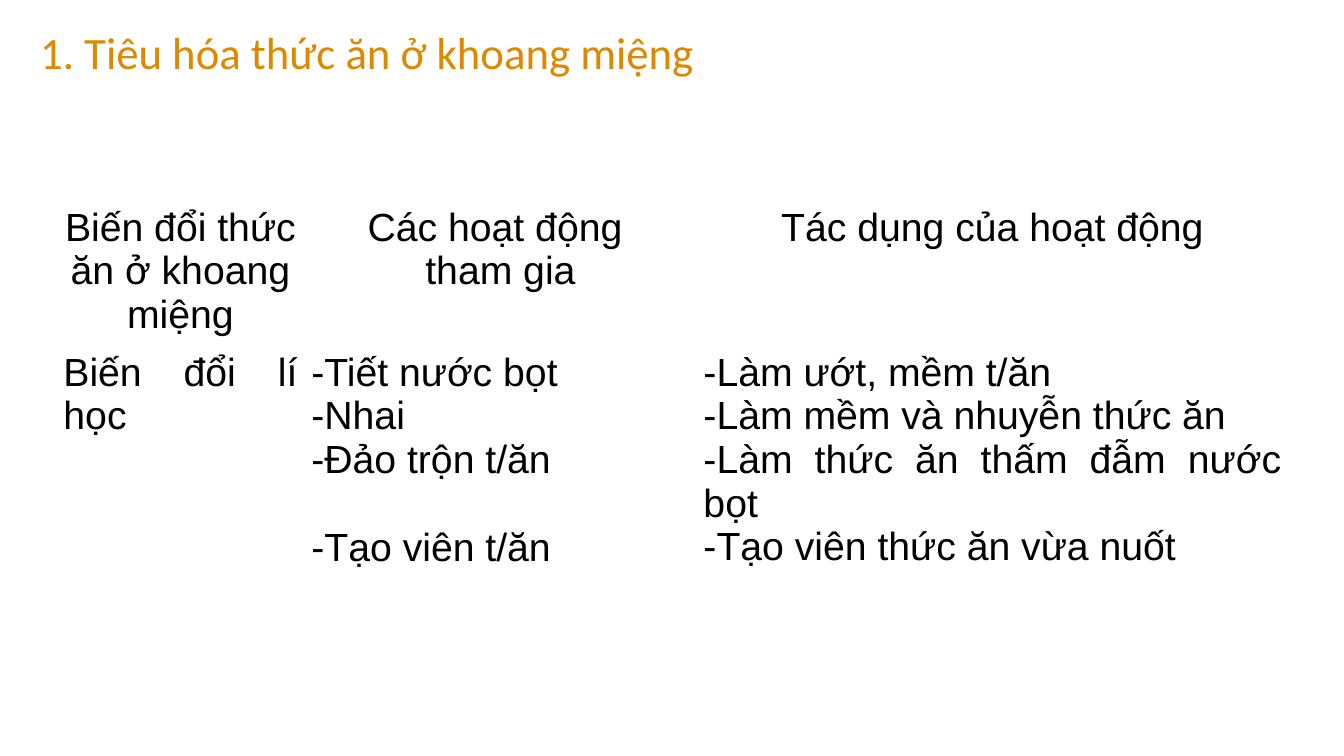
from dataclasses import dataclass

import pptx
import pptx.dml.color
import pptx.enum.text
import pptx.util

Pt = pptx.util.Pt
Align = pptx.enum.text.PP_ALIGN

ORANGE = pptx.dml.color.RGBColor(0xDE, 0x88, 0x00)
BLACK = pptx.dml.color.RGBColor(0x00, 0x00, 0x00)

COLUMN_WIDTHS = (177.12, 280.08, 422.64)
ROW_HEIGHTS = (102.24, 225.36)
CELL_MARGIN = 5.04
LINE_HEIGHT = 31.3


@dataclass(frozen=True)
class Line:
    text: str
    space_before: float = 0


@dataclass(frozen=True)
class TableRow:
    align: Align
    cells: tuple[tuple[Line, ...], ...]


ROWS = (
    TableRow(Align.CENTER, (
        (Line("Biến đổi thức ăn ở khoang miệng"),),
        (Line("Các hoạt động "), Line("tham gia")),
        (Line("Tác dụng của hoạt động"),),
    )),
    TableRow(Align.JUSTIFY, (
        (Line("Biến đổi lí học"),),
        (Line("-Tiết nước bọt"), Line("-Nhai"), Line("-Đảo trộn t/ăn "),
         Line("-Tạo viên t/ăn", space_before=LINE_HEIGHT)),
        (Line("-Làm ướt, mềm t/ăn"), Line("-Làm mềm và nhuyễn thức ăn"),
         Line("-Làm thức ăn thấm đẫm nước bọt"), Line("-Tạo viên thức ăn vừa nuốt")),
    )),
)


def write_text(frame, lines: tuple[Line, ...], *, font: str, size: float,
               color: pptx.dml.color.RGBColor, align: Align = Align.LEFT) -> None:
    frame.word_wrap = True
    for index, line in enumerate(lines):
        para = frame.add_paragraph() if index else frame.paragraphs[0]
        para.alignment = align
        if line.space_before:
            para.space_before = Pt(line.space_before)
        span = para.add_run()
        span.text = line.text
        span.font.name = font
        span.font.size = Pt(size)
        span.font.bold = False
        span.font.color.rgb = color


def add_title(page, text: str) -> None:
    box = page.shapes.add_textbox(Pt(21.6), Pt(14.4), Pt(486.72), Pt(46.08))
    write_text(box.text_frame, (Line(text),), font="Calibri", size=32, color=ORANGE)


def add_digestion_table(page) -> None:
    table = page.shapes.add_table(
        len(ROWS), len(COLUMN_WIDTHS), Pt(40.32), Pt(141.84),
        Pt(sum(COLUMN_WIDTHS)), Pt(sum(ROW_HEIGHTS))).table
    table.first_row = False
    table.horz_banding = False
    for column, width in zip(table.columns, COLUMN_WIDTHS):
        column.width = Pt(width)
    for table_row, height, content in zip(table.rows, ROW_HEIGHTS, ROWS):
        table_row.height = Pt(height)
        for cell, lines in zip(table_row.cells, content.cells):
            cell.fill.background()
            cell.margin_left = cell.margin_right = Pt(CELL_MARGIN)
            cell.margin_top = cell.margin_bottom = Pt(CELL_MARGIN)
            write_text(cell.text_frame, lines, font="Arial", size=28,
                       color=BLACK, align=content.align)


def main() -> None:
    deck = pptx.Presentation()
    deck.slide_width, deck.slide_height = Pt(960), Pt(540)
    page = deck.slides.add_slide(deck.slide_layouts[6])

    # Table of changes in the mouth
    add_digestion_table(page)

    # Heading
    add_title(page, "1. Tiêu hóa thức ăn ở khoang miệng")

    deck.save("out.pptx")


if __name__ == "__main__":
    main()
